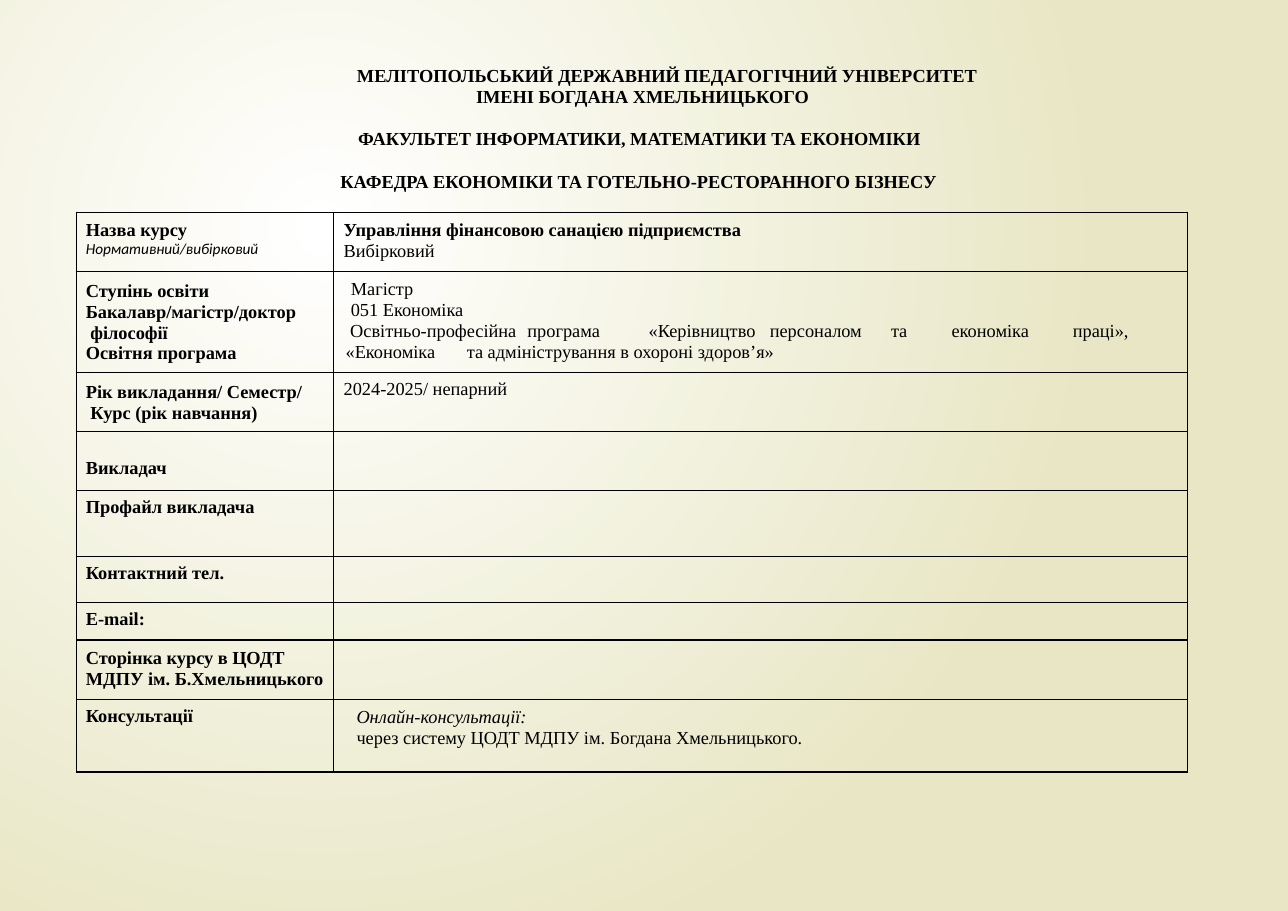
from lxml import etree
from pptx import Presentation
from pptx.dml.color import RGBColor
from pptx.oxml.ns import qn
from pptx.util import Pt

SERIF, SANS = "Times New Roman", "Calibri"
INK, PALE, SAND = "000000", "FFFFFF", "E8E6C4"
TAB = 39.6

# text, style, left indent, first-line indent, line spacing
HEAD = [
    ("МЕЛІТОПОЛЬСЬКИЙ ДЕРЖАВНИЙ ПЕДАГОГІЧНИЙ УНІВЕРСИТЕТ "
     "ІМЕНІ БОГДАНА ХМЕЛЬНИЦЬКОГО", "b", 89.3, -77.8, 13.8),
    ("ФАКУЛЬТЕТ ІНФОРМАТИКИ, МАТЕМАТИКИ ТА ЕКОНОМІКИ "
     "КАФЕДРА ЕКОНОМІКИ ТА ГОТЕЛЬНО-РЕСТОРАННОГО БІЗНЕСУ",
     "b", 0.7, 11.5, 27.6),
]
PLAN = ("Освітньо-професійна\tпрограма\t«Керівництво\tперсоналом\tта\t"
        "економіка\tпраці»,\t«Економіка\tта адміністрування в охороні здоров’я»")

# height, (top margin, lines) for the left and the right cell
ROWS = [
    (38.6,
     (4.3, [("Назва курсу", "b", 6, 0, 14.3),
            ("Нормативний/вибірковий", "small", 6, 0, 11.9)]),
     (4.3, [("Управління фінансовою санацією підприємства", "b", 6.7, 0, 14),
            ("Вибірковий", "", 6.7, 0, 14)])),
    (66,
     (5.8, [("Ступінь освіти", "b", 6, 0, 13.8),
            ("Бакалавр/магістр/доктор", "b", 6, 0, 13.8),
            ("філософії", "b", 9, 0, 13.8),
            ("Освітня програма", "b", 6, 0, 13.4)]),
     (4.3, [("Магістр", "", 11.4, 0, 14.1),
            ("051 Економіка", "", 11.4, 0, 13.8),
            (PLAN, "", 8, 3, 13.8)])),
    (38.6,
     (5.8, [("Рік викладання/ Семестр/", "b", 6, 0, 13.8),
            ("Курс (рік навчання)", "b", 9, 0, 13.8)]),
     (4.3, [("2024-2025/ непарний", "", 6.7, 0, 13.8)])),
    (38.6, (17, [("Викладач", "b", 6, 0, 13.8)]), (0, [])),
    (43.1, (4.3, [("Профайл викладача", "b", 6, 0, 13.8)]), (0, [])),
    (30.1, (4.3, [("Контактний тел.", "b", 6, 0, 13.8)]), (0, [])),
    (24.8, (4.3, [("E-mail:", "b", 6, 0, 13.8)]), (0, [])),
    (38.6,
     (4.3, [("Сторінка курсу в ЦОДТ", "b", 6, 0, 14.1),
            ("МДПУ ім. Б.Хмельницького", "b", 6, 0, 14.1)]),
     (0, [])),
    (47.7,
     (4.3, [("Консультації", "b", 6, 0, 13.8)]),
     (4.3, [("Онлайн-консультації:", "i", 15.1, 0, 14.1),
            ("через систему ЦОДТ МДПУ ім. Богдана Хмельницького.",
             "", 15.1, 0, 14.1)])),
]
COLS = [167.8, 558]


def paint(color, value):
    color.rgb = RGBColor.from_string(value)


def child(node, tag, **attrs):
    item = etree.SubElement(node, qn(tag))
    for key, value in attrs.items():
        item.set(key, str(value))
    return item


def write(frame, lines):
    frame.word_wrap = True
    for i, (text, style, left, first, space) in enumerate(lines):
        para = frame.add_paragraph() if i else frame.paragraphs[0]
        para.text = text
        para.line_spacing = Pt(space)
        props = para._p.get_or_add_pPr()
        props.set("marL", str(Pt(left)))
        props.set("indent", str(Pt(first)))
        if "\t" in text:
            props.set("defTabSz", str(Pt(TAB)))
            tabs = child(props, "a:tabLst")
            for n in range(1, 14):
                child(tabs, "a:tab", pos=Pt(n * TAB), algn="l")
        for run in para.runs:
            font = run.font
            font.name = SANS if style == "small" else SERIF
            font.size = Pt(10 if style == "small" else 12)
            font.bold = style == "b"
            font.italic = style in ("i", "small")
            paint(font.color, INK)


def border(cell):
    props = cell._tc.get_or_add_tcPr()
    for i, side in enumerate("LRTB"):
        line = child(props, "a:ln" + side, w=Pt(1))
        child(child(line, "a:solidFill"), "a:srgbClr", val=INK)
        props.insert(i, line)


def backdrop(slide):
    fill = slide.background.fill
    fill.gradient()
    for stop, value in zip(fill.gradient_stops, (PALE, SAND)):
        paint(stop.color, value)
    grad = slide.element.find(".//" + qn("a:gradFill"))
    grad.remove(grad.find(qn("a:lin")))
    ring = child(grad, "a:path", path="circle")
    child(ring, "a:fillToRect", l=50000, t=50000, r=100000, b=100000)


def main():
    deck = Presentation()
    deck.slide_width, deck.slide_height = Pt(841.7), Pt(595.4)
    slide = deck.slides.add_slide(deck.slide_layouts[6])
    backdrop(slide)

    frame = slide.shapes.add_textbox(
        Pt(221.8), Pt(40.3), Pt(419.8), Pt(85.7)).text_frame
    frame.margin_left = frame.margin_right = frame.margin_bottom = 0
    frame.margin_top = Pt(2.2)
    write(frame, HEAD)

    high = sum(row[0] for row in ROWS)
    table = slide.shapes.add_table(
        len(ROWS), len(COLS), Pt(50.1), Pt(138.7),
        Pt(sum(COLS)), Pt(high)).table
    table.first_row = table.horz_banding = False
    for col, wide in zip(table.columns, COLS):
        col.width = Pt(wide)
    for row, (tall, *cells) in zip(table.rows, ROWS):
        row.height = Pt(tall)
        for cell, (top, lines) in zip(row.cells, cells):
            cell.margin_left = cell.margin_right = cell.margin_bottom = 0
            cell.margin_top = Pt(top)
            cell.fill.background()
            border(cell)
            write(cell.text_frame, lines)

    deck.save("out.pptx")


if __name__ == "__main__":
    main()
